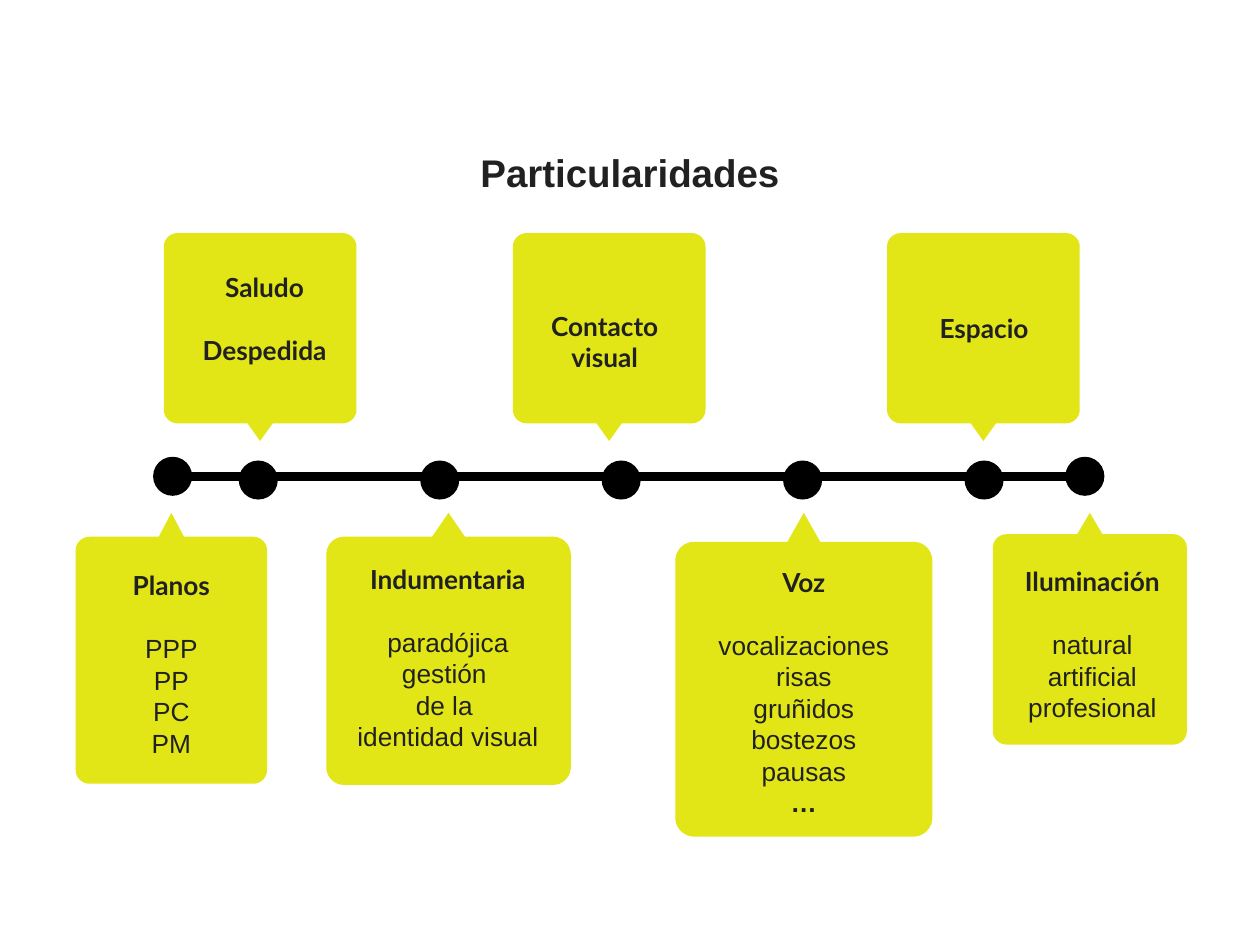
import math
import pptx
import pptx.dml.color
import pptx.enum.shapes
import pptx.enum.text
import pptx.oxml.ns
import pptx.util
from lxml import etree

Inches, Pt = pptx.util.Inches, pptx.util.Pt
LIME, BLACK, INK = "E2E616", "000000", "212121"
HEADING = {"font": "Lato", "bold": True}
BODY = {"font": "Arial"}
LINE_PITCH = 18

TITLE = "Particularidades"
AXIS_Y, AXIS_START, AXIS_END = 3.78, 1.37, 8.61
DOT_SIZE = 0.31
FIRST_EVENT, EVENT_GAP, EVENT_COUNT, EVENT_Y = 2.05, 1.44, 5, 3.81

# Upper callouts share one size: heading lines, left, text box (left, top, width)
UPPER_EDGE, UPPER_TOP, UPPER_TIP, UPPER_WIDTH = 3.36, 1.85, 3.5, 1.53
UPPER = [
    (["Saludo", "Despedida"], 1.30, (1.34, 2.05, 1.52)),
    (["Contacto visual"], 4.07, (4.07, 2.36, 1.46)),
    (["Espacio"], 7.04, (7.05, 2.38, 1.52)),
]
# Lower callouts: heading, body lines, (left, width, top, bottom),
# (corner radius, half pointer), text box (left, top, width)
LOWER_TIP = 4.07
LOWER = [
    ("Planos", ["PPP", "PP", "PC", "PM"],
     (0.60, 1.52, 4.26, 6.22), (0.11, 0.10), (0.60, 4.42, 1.52)),
    ("Indumentaria", ["paradójica gestión ", "de la ", "identidad visual"],
     (2.59, 1.94, 4.26, 6.23), (0.14, 0.13), (2.72, 4.37, 1.67)),
    ("Voz", ["vocalizaciones", "risas", "gruñidos", "bostezos", "pausas", "…"],
     (5.36, 2.04, 4.30, 6.64), (0.15, 0.13), (5.60, 4.39, 1.56)),
    ("Iluminación", ["natural", "artificial", "profesional"],
     (7.88, 1.54, 4.24, 5.91), (0.11, 0.10), (7.94, 4.39, 1.46)),
]


def rgb(code):
    return pptx.dml.color.RGBColor.from_string(code)


def paint(shape, colour):
    shape.fill.solid()
    shape.fill.fore_color.rgb = rgb(colour)
    shape.line.fill.background()
    shape.shadow.inherit = False


def add_text(frame, text, first=False, size=15, font="Arial", bold=False,
             before=0, pitch=LINE_PITCH):
    paragraph = frame.paragraphs[0] if first else frame.add_paragraph()
    paragraph.alignment = pptx.enum.text.PP_ALIGN.CENTER
    paragraph.space_before = Pt(before)
    if pitch:
        paragraph.line_spacing = Pt(pitch)
    run = paragraph.add_run()
    run.text = text
    run.font.size, run.font.name, run.font.bold = Pt(size), font, bold
    run.font.color.rgb = rgb(INK)


def set_frame(frame, anchor):
    frame.word_wrap = True
    frame.vertical_anchor = anchor
    frame.margin_left = frame.margin_right = Inches(0.1)
    frame.margin_top = frame.margin_bottom = Inches(0.1)


def add_callout(slide, left, width, edge, far, tip, radius=0.11, half_pointer=0.1):
    """Draw a rounded box whose pointer leaves the middle of the side at edge."""
    right, middle = left + width, left + width / 2
    inward = math.copysign(1, far - edge)
    near_y, far_y = edge + inward * radius, far - inward * radius
    corners = [(right - radius, near_y, -90), (right - radius, far_y, 0),
               (left + radius, far_y, 90), (left + radius, near_y, 180)]
    points = [(middle - half_pointer, edge), (middle, tip), (middle + half_pointer, edge)]
    for x, y, start in corners:
        for step in range(0, 91, 10):
            angle = math.radians(start + step)
            points.append((x + radius * math.cos(angle),
                           y + inward * radius * math.sin(angle)))
    # The builder keeps whole units only, so the points go in as EMU.
    points = [(Inches(x), Inches(y)) for x, y in points]
    outline = slide.shapes.build_freeform(*points[0])
    outline.add_line_segments(points[1:], close=True)
    paint(outline.convert_to_shape(), LIME)


def add_label(slide, place, lines):
    left, top, width = place
    height = 0.2 + len(lines) * LINE_PITCH / 72
    box = slide.shapes.add_textbox(*map(Inches, (left, top, width, height)))
    set_frame(box.text_frame, pptx.enum.text.MSO_ANCHOR.TOP)
    for index, (text, style) in enumerate(lines):
        # The second line stands one line apart from the heading.
        add_text(box.text_frame, text, first=index == 0,
                 before=LINE_PITCH if index == 1 else 0, **style)


def add_dot(slide, x, y):
    corner = (x - DOT_SIZE / 2, y - DOT_SIZE / 2)
    dot = slide.shapes.add_shape(pptx.enum.shapes.MSO_SHAPE.OVAL,
                                 *map(Inches, (*corner, DOT_SIZE, DOT_SIZE)))
    paint(dot, BLACK)


def add_axis(slide):
    axis = slide.shapes.add_connector(
        pptx.enum.shapes.MSO_CONNECTOR.STRAIGHT,
        *map(Inches, (AXIS_START, AXIS_Y, AXIS_END, AXIS_Y)))
    axis.line.width = Pt(5)
    axis.line.color.rgb = rgb(BLACK)
    etree.SubElement(axis._element.spPr, pptx.oxml.ns.qn("a:effectLst"))
    for x in (AXIS_START, AXIS_END):
        add_dot(slide, x, AXIS_Y)
    for index in range(EVENT_COUNT):
        add_dot(slide, FIRST_EVENT + index * EVENT_GAP, EVENT_Y)


def main():
    deck = pptx.Presentation()
    deck.slide_width, deck.slide_height = Inches(10), Inches(7.5)
    slide = deck.slides.add_slide(deck.slide_layouts[5])

    title = slide.shapes.title
    title.left, title.top, title.width, title.height = map(Inches, (0, 0.32, 10, 1.33))
    set_frame(title.text_frame, pptx.enum.text.MSO_ANCHOR.BOTTOM)
    add_text(title.text_frame, TITLE, first=True, size=22, bold=True, pitch=None)

    add_axis(slide)
    for headings, left, place in UPPER:
        add_callout(slide, left, UPPER_WIDTH, UPPER_EDGE, UPPER_TOP, UPPER_TIP)
        add_label(slide, place, [(text, HEADING) for text in headings])
    for heading, body, (left, width, top, bottom), (radius, pointer), place in LOWER:
        add_callout(slide, left, width, top, bottom, LOWER_TIP, radius, pointer)
        lines = [(text, {**BODY, "bold": text == "…"}) for text in body]
        add_label(slide, place, [(heading, HEADING)] + lines)

    deck.save("out.pptx")


if __name__ == "__main__":
    main()
